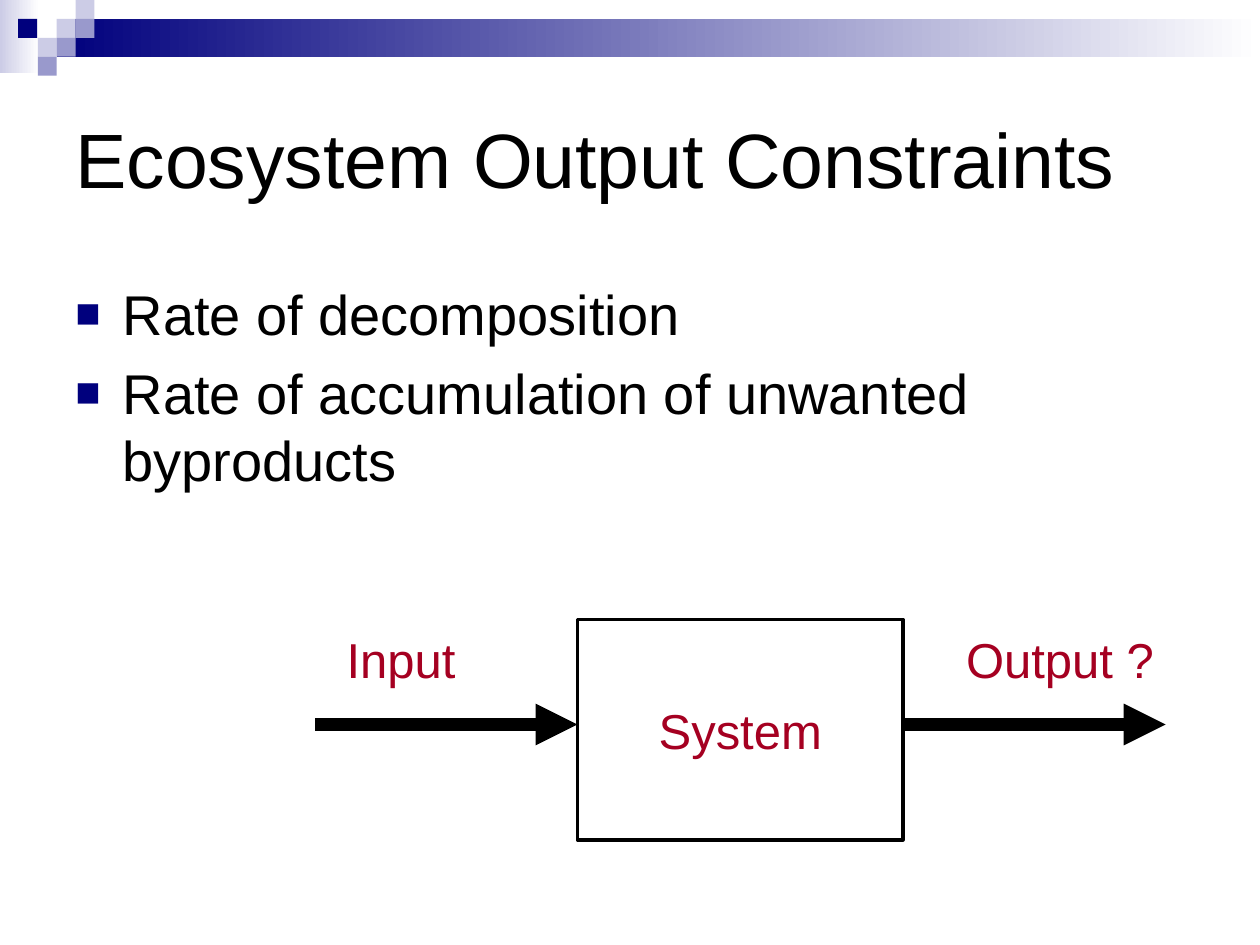
from typing import NamedTuple

from lxml import etree
from pptx import Presentation
from pptx.dml.color import RGBColor
from pptx.enum.shapes import MSO_CONNECTOR, MSO_SHAPE
from pptx.enum.text import MSO_ANCHOR, PP_ALIGN
from pptx.oxml.ns import qn
from pptx.util import Pt

RECT = MSO_SHAPE.RECTANGLE
LINE = MSO_CONNECTOR.STRAIGHT
TOP, MIDDLE = MSO_ANCHOR.TOP, MSO_ANCHOR.MIDDLE
LEFT, CENTER = PP_ALIGN.LEFT, PP_ALIGN.CENTER

FONT = "Arial"
BLACK, WHITE, RED = "000000", "FFFFFF", "A50021"
NAVY, MID, PALE = "00007D", "9999CC", "CCCCE6"
SIDE = 10.8  # side of a corner square


class Box(NamedTuple):
    x: float
    y: float
    w: float
    h: float


class Band(NamedTuple):
    box: Box
    start: str


class Square(NamedTuple):
    x: float
    row: int
    fill: str


class Label(NamedTuple):
    text: str
    box: Box


class Arrow(NamedTuple):
    x: float
    end: float


BANDS = [Band(Box(0, 0, 22.4, 41.8), PALE), Band(Box(32.4, 10.8, 687.6, 21.6), NAVY)]
SQUARES = [
    Square(32.4, 1, PALE),
    Square(43.2, 0, PALE),
    Square(43.2, 1, MID),
    Square(21.6, 2, PALE),
    Square(10.4, 1, NAVY),
    Square(32.4, 2, MID),
    Square(21.6, 3, MID),
]
POINTS = ["Rate of decomposition", "Rate of accumulation of unwanted byproducts"]
SYSTEM = Box(330, 354, 186, 126)
FLOW = 414  # height of both arrows on the slide
ARROWS = [Arrow(180, 330), Arrow(516, 666)]
LABELS = [
    Label("Input", Box(191, 356, 78, 41)),
    Label("Output ?", Box(545, 356, 123, 41)),
]


def tint(code: str) -> RGBColor:
    return RGBColor.from_string(code)


def add_rect(slide, box: Box):
    shape = slide.shapes.add_shape(RECT, *map(Pt, box))
    shape.shadow.inherit = False
    shape.line.fill.background()
    return shape


def add_band(slide, band: Band) -> None:
    fill = add_rect(slide, band.box).fill
    fill.gradient()
    fill.gradient_angle = 0
    for stop, code, pos in zip(fill.gradient_stops, (band.start, WHITE), (0, 1)):
        stop.color.rgb = tint(code)
        stop.position = pos


def add_square(slide, square: Square) -> None:
    shape = add_rect(slide, Box(square.x, square.row * SIDE, SIDE, SIDE))
    shape.fill.solid()
    shape.fill.fore_color.rgb = tint(square.fill)


def add_bullet(para) -> None:
    props = para._p.get_or_add_pPr()
    props.set("marL", str(Pt(27)))
    props.set("indent", str(Pt(-27)))
    color = etree.SubElement(props, qn("a:buClr"))
    etree.SubElement(color, qn("a:srgbClr"), val=NAVY)
    etree.SubElement(props, qn("a:buSzPct"), val="75000")
    etree.SubElement(props, qn("a:buFont"), typeface=FONT)
    etree.SubElement(props, qn("a:buChar"), char="■")


def put_text(shape, *lines: str, size: float, color: str = BLACK, align=LEFT,
             anchor=TOP, wrap: bool = True, bullet: bool = False, gap: float = 0) -> None:
    frame = shape.text_frame
    frame.word_wrap = wrap
    frame.vertical_anchor = anchor
    for i, line in enumerate(lines):
        para = frame.add_paragraph() if i else frame.paragraphs[0]
        para.alignment = align
        if i:
            para.space_before = Pt(gap)
        if bullet:
            add_bullet(para)
        run = para.add_run()
        run.text = line
        run.font.name = FONT
        run.font.size = Pt(size)
        run.font.color.rgb = tint(color)


def add_text(slide, box: Box, *lines: str, **style) -> None:
    put_text(slide.shapes.add_textbox(*map(Pt, box)), *lines, **style)


def add_arrow(slide, arrow: Arrow) -> None:
    line = slide.shapes.add_connector(LINE, Pt(arrow.x), Pt(FLOW), Pt(arrow.end), Pt(FLOW))
    line.line.color.rgb = tint(BLACK)
    line.line.width = Pt(8)
    etree.SubElement(line.line._get_or_add_ln(), qn("a:tailEnd"), type="triangle")
    etree.SubElement(line._element.spPr, qn("a:effectLst"))


def main() -> None:
    deck = Presentation()
    deck.slide_width, deck.slide_height = Pt(720), Pt(540)
    slide = deck.slides.add_slide(deck.slide_layouts[6])

    # Header bands and corner squares
    for band in BANDS:
        add_band(slide, band)
    for square in SQUARES:
        add_square(slide, square)

    # Title and points
    add_text(slide, Box(36, 36, 648, 108), "Ecosystem Output Constraints",
             size=44, anchor=MIDDLE)
    add_text(slide, Box(36, 156, 648, 306), *POINTS, size=32, bullet=True, gap=7)

    # System with its input and output
    system = add_rect(slide, SYSTEM)
    system.fill.background()
    system.line.color.rgb = tint(BLACK)
    system.line.width = Pt(2)
    put_text(system, "System", size=28, color=RED, align=CENTER, anchor=MIDDLE, wrap=False)
    for arrow in ARROWS:
        add_arrow(slide, arrow)
    for label in LABELS:
        add_text(slide, label.box, label.text, size=28, color=RED, wrap=False)

    deck.save("out.pptx")


if __name__ == "__main__":
    main()
